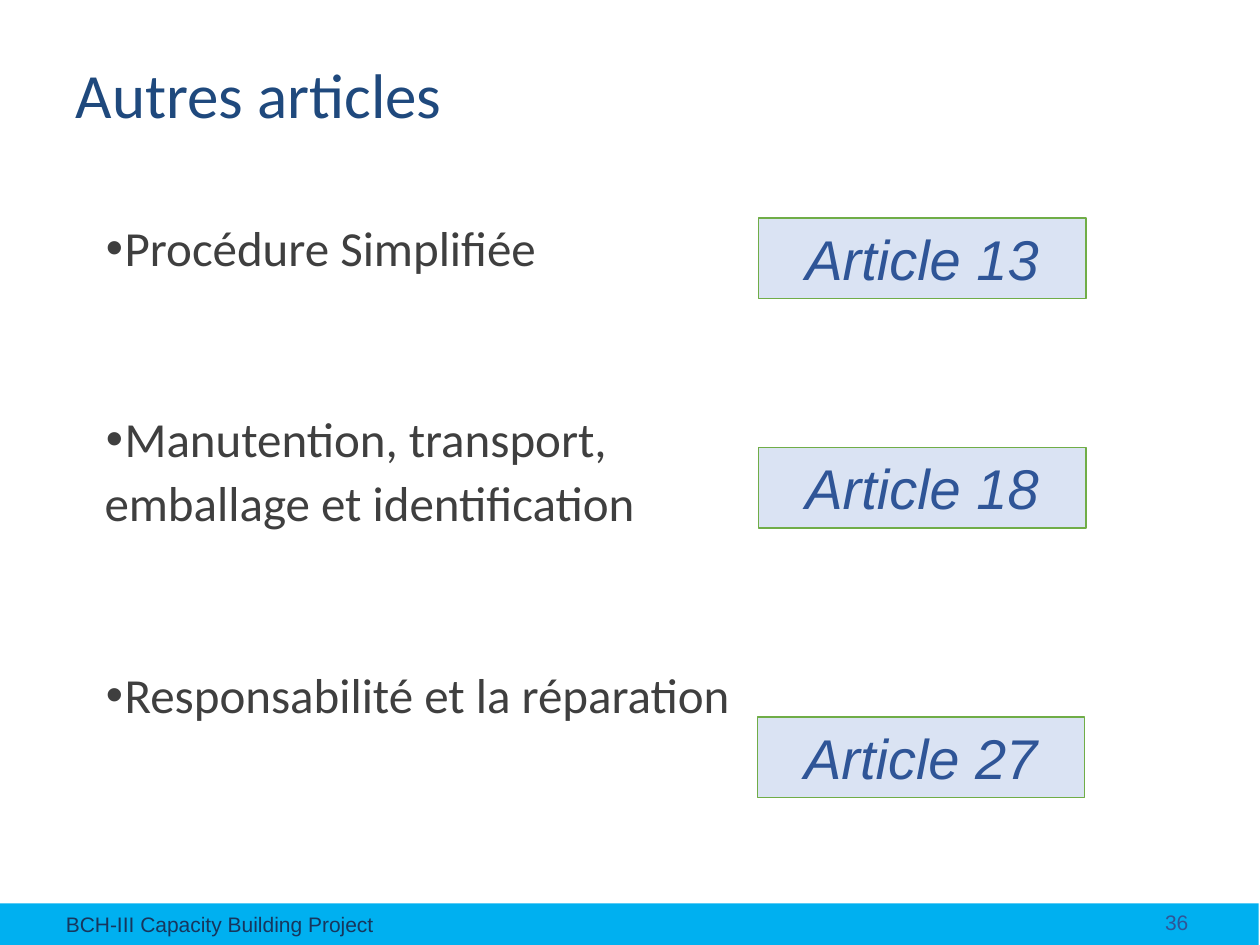
"""Build the slide on other articles, with three topics and their article tags."""
from lxml import etree
from pptx import Presentation, util as u
from pptx.dml.color import RGBColor
from pptx.enum import shapes, text
from pptx.oxml.ns import qn

THEME = {
    "head": ("Calibri", 36, "1F497D"),
    "body": ("Calibri", 28, "3F3F3F"),
    "tag": ("Arial", 32, "2F5597"),
    "foot": ("Arial", 12, "17365D"),
    "page": ("Arial", 12, "2F5597"),
    "band": "00B0F0",
    "fill": "DAE3F3",
    "edge": "70AD47",
}
TITLE = "Autres articles"
TOPICS = [
    ["Procédure Simplifiée"],
    ["Manutention, transport,", "emballage et identification"],
    ["Responsabilité et la réparation"],
]
TAGS = [("Article 13", 6.02, 1.73), ("Article 18", 6.02, 3.55), ("Article 27", 6.01, 5.69)]
TAG_SIZE = (2.6, 0.64)
ALIGN = text.PP_ALIGN
NOTES = [
    ("BCH-III Capacity Building Project", "foot", (0.16, 7.18, 3.17, 0.31), ALIGN.CENTER),
    ("36", "page", (7.28, 7.15, 2.25, 0.34), ALIGN.RIGHT),
]
LINE_GAP, TOPIC_GAP = 6.4, 79


def color(code):
    return RGBColor.from_string(code)


def style(para, role, align=ALIGN.LEFT):
    para.alignment = align
    for run in para.runs:
        font = run.font
        font.name, size, code = THEME[role]
        font.size = u.Pt(size)
        font.color.rgb = color(code)
        font.italic = role == "tag"


def place(shape, box):
    shape.left, shape.top, shape.width, shape.height = map(u.Inches, box)


def bullet(para, shown):
    props = para._p.get_or_add_pPr()
    left, hang = (0.38, -0.15) if shown else (0.22, 0)
    props.set("marL", str(u.Inches(left)))
    props.set("indent", str(u.Inches(hang)))
    if not shown:
        etree.SubElement(props, qn("a:buNone"))
        return
    tint = etree.SubElement(props, qn("a:buClr"))
    etree.SubElement(tint, qn("a:srgbClr"), val=THEME["body"][2])
    etree.SubElement(props, qn("a:buFont"), typeface="Arial")
    etree.SubElement(props, qn("a:buChar"), char="•")


def block(slide, box, fill, edge=None):
    shape = slide.shapes.add_shape(shapes.MSO_SHAPE.RECTANGLE, *map(u.Inches, box))
    shape.shadow.inherit = False
    shape.fill.solid()
    shape.fill.fore_color.rgb = color(fill)
    if edge:
        shape.line.color.rgb = color(edge)
        shape.line.width = u.Pt(0.75)
    else:
        shape.line.fill.background()
    return shape


def topics(body):
    place(body, (0.51, 1.73, 9, 5.33))
    frame = body.text_frame
    frame.auto_size = text.MSO_AUTO_SIZE.NONE
    rows = [(line, row == 0) for topic in TOPICS for row, line in enumerate(topic)]
    frame.text = "\n".join(line for line, lead in rows)
    for index, (para, (line, lead)) in enumerate(zip(frame.paragraphs, rows)):
        bullet(para, lead)
        para.line_spacing = 0.9
        para.space_before = u.Pt(0 if index == 0 else TOPIC_GAP if lead else LINE_GAP)
        style(para, "body")


def main():
    deck = Presentation()
    deck.slide_width, deck.slide_height = u.Inches(10), u.Inches(7.5)
    slide = deck.slides.add_slide(deck.slide_layouts[1])
    title, body = slide.placeholders
    place(title, (0.5, 0, 7.1, 1.55))
    title.text_frame.text = TITLE
    title.text_frame.vertical_anchor = text.MSO_ANCHOR.MIDDLE
    title.text_frame.paragraphs[0].line_spacing = 0.9
    style(title.text_frame.paragraphs[0], "head")
    topics(body)
    block(slide, (0, 7.17, 9.99, 0.36), THEME["band"])
    for words, role, box, align in NOTES:
        frame = slide.shapes.add_textbox(*map(u.Inches, box)).text_frame
        frame.word_wrap = True
        frame.vertical_anchor = text.MSO_ANCHOR.MIDDLE
        frame.text = words
        style(frame.paragraphs[0], role, align)
    for words, left, top in TAGS:
        frame = block(slide, (left, top, *TAG_SIZE), THEME["fill"], THEME["edge"]).text_frame
        frame.vertical_anchor = text.MSO_ANCHOR.TOP
        frame.auto_size = text.MSO_AUTO_SIZE.SHAPE_TO_FIT_TEXT
        frame.text = words
        style(frame.paragraphs[0], "tag", ALIGN.CENTER)
    deck.save("out.pptx")


if __name__ == "__main__":
    main()
